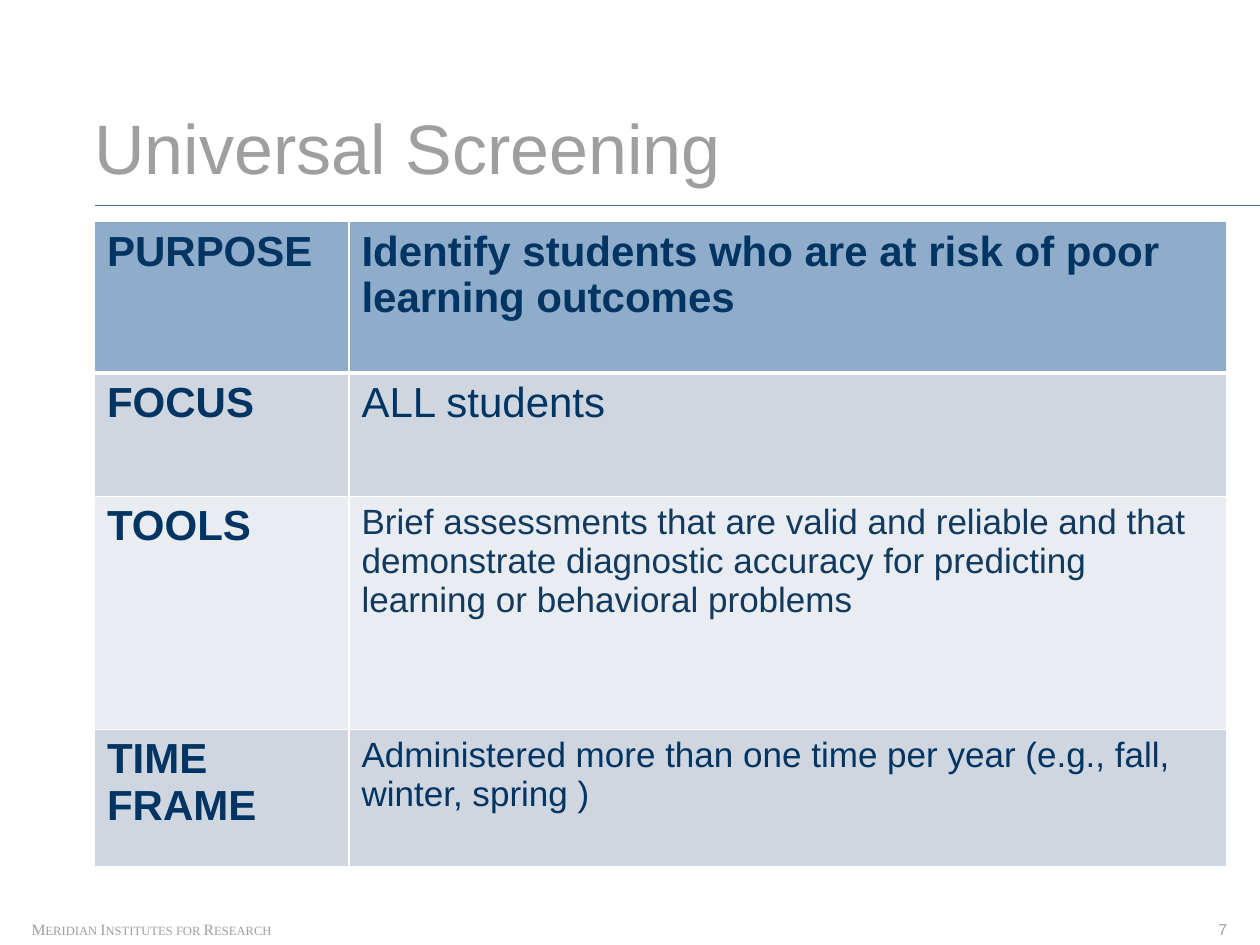
from dataclasses import dataclass

from lxml.etree import SubElement
from pptx import Presentation
from pptx.dml.color import RGBColor as RGB
from pptx.enum.shapes import MSO_CONNECTOR
from pptx.enum.text import MSO_ANCHOR, PP_ALIGN
from pptx.oxml import parse_xml
from pptx.oxml.ns import nsdecls, qn
from pptx.util import Inches, Pt


@dataclass(frozen=True)
class Theme:
    sans: str = "Arial"
    serif: str = "Times New Roman"
    gray: str = "9F9F9F"
    rule: str = "47739F"
    navy: str = "003462"
    slate: str = "123A5F"
    header: str = "8FADCA"
    bands: tuple = ("D0D6DF", "E9ECF0")
    border: str = "FFFFFF"
    title_size: int = 40
    large: int = 24
    medium: int = 20
    small: int = 9


THEME = Theme()

# Content: label, description, description size, description colour, row height
TITLE = "Universal Screening"
ORGANIZATION = "Meridian Institutes for Research"
PAGE = "7"
SCREENING = [
    ("PURPOSE", "Identify students who are at risk of poor learning outcomes",
     THEME.large, THEME.navy, 1.2),
    ("FOCUS", "ALL students", THEME.large, THEME.navy, 0.98),
    ("TOOLS", "Brief assessments that are valid and reliable and that demonstrate "
     "diagnostic accuracy for predicting learning or behavioral problems",
     THEME.medium, THEME.slate, 1.85),
    ("TIME\nFRAME", "Administered more than one time per year (e.g., fall, winter, spring )",
     THEME.medium, THEME.navy, 1.09),
]

# Layout in inches
WIDTH, HEIGHT = 10, 7.5
LEFT, CONTENT_WIDTH = 0.75, 8.99
RIGHT = LEFT + CONTENT_WIDTH
LABEL_WIDTH = 2.02
RULE_Y, TABLE_TOP = 1.63, 1.76
FOOTER_TOP, FOOTER_HEIGHT = 7.3, 0.15


def style(paragraph, size, color, name=THEME.sans, bold=False):
    font = paragraph.font
    font.name, font.size, font.bold = name, Pt(size), bold
    font.color.rgb = RGB.from_string(color)


def clear_margins(frame):
    frame.margin_left = frame.margin_top = frame.margin_right = frame.margin_bottom = 0


def add_footer(slide, text, left, width, name, align):
    box = slide.shapes.add_textbox(*map(Inches, (left, FOOTER_TOP, width, FOOTER_HEIGHT)))
    frame = box.text_frame
    clear_margins(frame)
    frame.word_wrap = False
    paragraph = frame.paragraphs[0]
    paragraph.text, paragraph.alignment = text, align
    style(paragraph, THEME.small, THEME.gray, name)
    return paragraph


def set_borders(cell, **widths):
    properties = cell._tc.get_or_add_tcPr()
    for index, side in enumerate("LRTB"):
        properties.insert(index, parse_xml(
            f'<a:ln{side} {nsdecls("a")} w="{Pt(widths.get(side, 1))}"><a:solidFill>'
            f'<a:srgbClr val="{THEME.border}"/></a:solidFill></a:ln{side}>'))


def fill_cell(cell, text, size, color, bold, row):
    cell.text = text
    for paragraph in cell.text_frame.paragraphs:
        style(paragraph, size, color, bold=bold)
    cell.fill.solid()
    cell.fill.fore_color.rgb = RGB.from_string(
        THEME.bands[(row - 1) % 2] if row else THEME.header)
    # A heavier rule divides the header from the body
    set_borders(cell, **{0: {"B": 3}, 1: {"T": 3}}.get(row, {}))


def main():
    deck = Presentation()
    deck.slide_width, deck.slide_height = Inches(WIDTH), Inches(HEIGHT)
    slide = deck.slides.add_slide(deck.slide_layouts[5])

    # Footer organization and the rule under the title
    organization = add_footer(slide, ORGANIZATION, 0.25, 1.95, THEME.serif, PP_ALIGN.LEFT)
    organization.runs[0].font._element.set("cap", "small")
    rule = slide.shapes.add_connector(
        MSO_CONNECTOR.STRAIGHT, *map(Inches, (LEFT, RULE_Y, WIDTH, RULE_Y)))
    rule.line.color.rgb, rule.line.width = RGB.from_string(THEME.rule), Pt(0.5)
    SubElement(rule._element.spPr, qn("a:effectLst"))

    # Title
    title = slide.shapes.title
    title.left, title.top, title.width, title.height = map(
        Inches, (LEFT, 0.83, CONTENT_WIDTH, 0.67))
    heading = title.text_frame
    heading.text = TITLE
    clear_margins(heading)
    heading.vertical_anchor = MSO_ANCHOR.BOTTOM
    heading.paragraphs[0].alignment = PP_ALIGN.LEFT
    style(heading.paragraphs[0], THEME.title_size, THEME.gray)

    # Page number
    add_footer(slide, PAGE, RIGHT - 0.15, 0.15, THEME.sans, PP_ALIGN.RIGHT)

    # Screening table
    table_height = sum(entry[-1] for entry in SCREENING)
    table = slide.shapes.add_table(len(SCREENING), 2, *map(
        Inches, (LEFT, TABLE_TOP, CONTENT_WIDTH, table_height))).table
    table.columns[0].width = Inches(LABEL_WIDTH)
    table.columns[1].width = Inches(CONTENT_WIDTH - LABEL_WIDTH)
    for row, (label, description, size, color, height) in enumerate(SCREENING):
        table.rows[row].height = Inches(height)
        fill_cell(table.cell(row, 0), label, THEME.large, THEME.navy, True, row)
        fill_cell(table.cell(row, 1), description, size, color, row == 0, row)

    deck.save("out.pptx")


if __name__ == "__main__":
    main()
